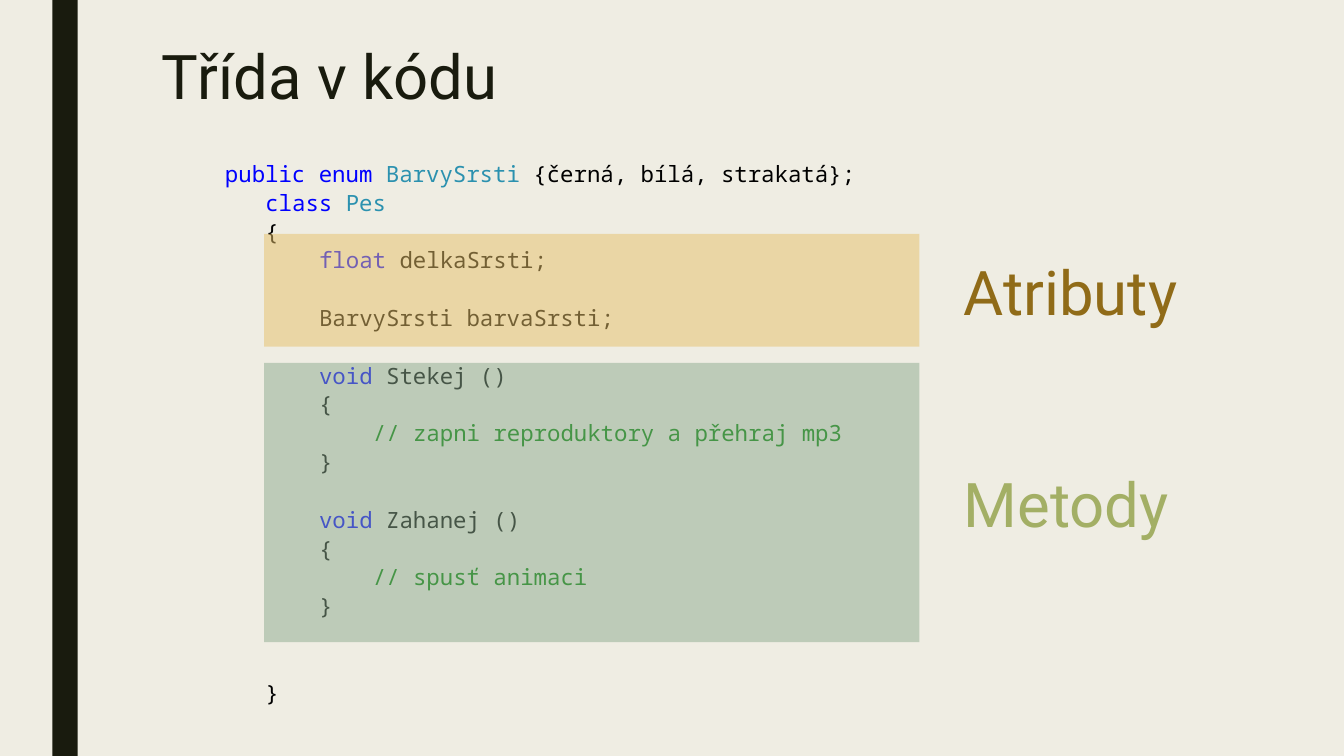
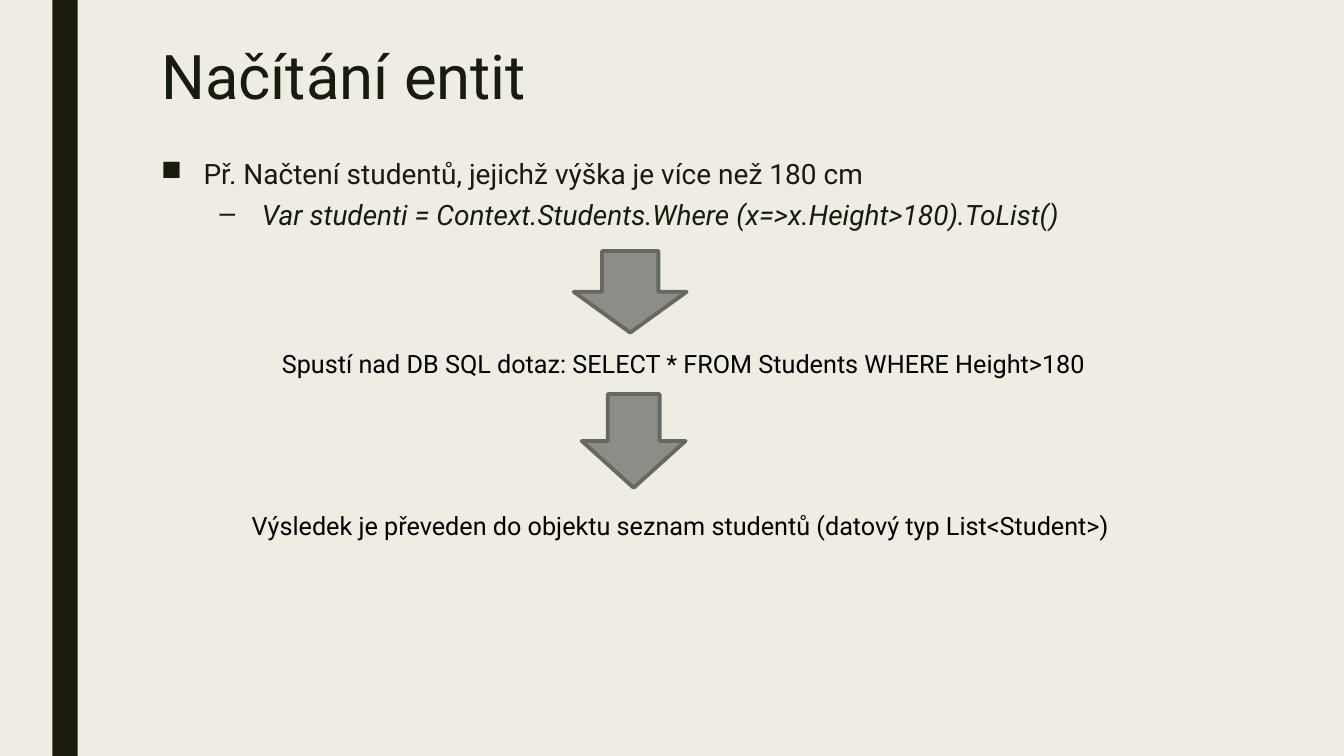
"""Two slides on classes in code and loading entities."""
from lxml import etree
from pptx import Presentation
from pptx.dml.color import RGBColor
from pptx.enum import shapes, text
from pptx.oxml import ns
from pptx.util import Inches, Pt

COLOR = {
    "paper": "EFEDE3", "ink": "191B0E", "black": "000000",
    "key": "0000FF", "type": "2B91AF", "note": "008000",
    "gold": "E6C069", "amber": "906B18", "sage": "8DAB8E", "moss": "A3AF65",
    "gray": "8C8D86", "edge": "686863",
}
SANS, MONO = "Roboto", "Noto Sans Mono"
STEP = 20.57
CHAR = 0.13335


def add_text(slide, box, lines, size, color, font=SANS):
    frame = slide.shapes.add_textbox(*map(Inches, box)).text_frame
    frame.word_wrap = True
    for i, line in enumerate(lines):
        para = frame.paragraphs[0] if i == 0 else frame.add_paragraph()
        para.font.size, para.font.name = Pt(size), font
        para.font.color.rgb = RGBColor.from_string(COLOR[color])
        for words, tint in line:
            run = para.add_run()
            run.text = words
            if tint != color:
                run.font.color.rgb = RGBColor.from_string(COLOR[tint])
    return frame.paragraphs


def add_block(slide, kind, box, fill, alpha=None, edge=None):
    block = slide.shapes.add_shape(kind, *map(Inches, box))
    block.shadow.inherit = False
    block.fill.solid()
    block.fill.fore_color.rgb = RGBColor.from_string(COLOR[fill])
    if alpha:
        tint = block.fill._xPr.find(".//" + ns.qn("a:srgbClr"))
        etree.SubElement(tint, ns.qn("a:alpha")).set("val", str(alpha * 1000))
    if edge:
        block.line.color.rgb = RGBColor.from_string(COLOR[edge])
        block.line.width = Pt(2.75)
    else:
        block.line.fill.background()


RECT = shapes.MSO_SHAPE.RECTANGLE
ARROW = shapes.MSO_SHAPE.DOWN_ARROW

prs = Presentation()
prs.slide_width, prs.slide_height = Inches(13.33), Inches(7.5)
back = prs.slide_master.background.fill
back.solid()
back.fore_color.rgb = RGBColor.from_string(COLOR["paper"])

pages = []
for title in ("Třída v kódu", "Načítání entit"):
    page = prs.slides.add_slide(prs.slide_layouts[6])
    add_block(page, RECT, (0.52, 0, 0.25, 7.5), "ink")
    head = add_text(page, (1.5, 0.42, 10.61, 0.93), [[(title, "ink")]], 44, "ink")
    head[0].line_spacing = 0.89
    pages.append(page)
code, load = pages

listing = [
    (1, 0, [("public enum ", "key"), ("BarvySrsti", "type"),
            (" {černá, bílá, strakatá};", "black")]),
    (4, 0, [("class ", "key"), ("Pes", "type")]),
    (4, 0, [("{", "black")]),
    (8, 0, [("float ", "key"), ("delkaSrsti;", "black")]),
    (8, 1, [("BarvySrsti barvaSrsti;", "black")]),
]
for name, note in (("Stekej", "// zapni reproduktory a přehraj mp3"),
                   ("Zahanej", "// spusť animaci")):
    listing += [
        (8, 1, [("void ", "key"), (name + " ()", "black")]),
        (8, 0, [("{", "black")]),
        (12, 0, [(note, "note")]),
        (8, 0, [("}", "black")]),
    ]
listing.append((4, 2, [("}", "black")]))

paras = add_text(code, (2, 1.52, 10.44, 5.76), [row[2] for row in listing],
                 16, "black", MONO)
for para, (depth, gap, _) in zip(paras, listing):
    para.line_spacing = Pt(STEP)
    para.space_before = Pt(STEP * gap)
    para._p.get_or_add_pPr().set("marL", str(Inches(CHAR * depth)))

for label, top, high, fill, y, tint in (
        ("Atributy", 2.32, 1.12, "gold", 2.47, "amber"),
        ("Metody", 3.6, 2.77, "sage", 4.57, "moss")):
    add_block(code, RECT, (2.62, top, 6.5, high), fill, alpha=50)
    add_text(code, (9.46, y, 3.46, 0.84), [[(label, tint)]], 44, tint)

points = [
    ("Př. Načtení studentů, jejichž výška je více než 180 cm", "■", 0.42, 10),
    ("Var studenti = Context.Students.Where (x=>x.Height>180).ToList()", "–", 1, 5),
]
paras = add_text(load, (1.5, 1.53, 10.61, 5.35),
                 [[(point[0], "ink")] for point in points], 20, "ink")
for para, (_, mark, left, gap) in zip(paras, points):
    para.line_spacing = 0.94
    para.space_before, para.space_after = Pt(gap), Pt(2)
    props = para._p.get_or_add_pPr()
    props.set("marL", str(Inches(left)))
    props.set("indent", str(Inches(-0.42)))
    bullet = etree.Element(ns.qn("a:buChar"), char=mark)
    props.find(ns.qn("a:spcAft")).addnext(bullet)
paras[1].font.italic = True

for arrow, box, words in (
        ((5.69, 2.49, 1.12, 0.81), (2.02, 3.41, 9.52, 0.4),
         "Spustí nad DB SQL dotaz: SELECT * FROM Students WHERE Height>180"),
        ((5.77, 3.91, 1.03, 0.93), (2.08, 5.01, 9.34, 0.4),
         "Výsledek je převeden do objektu seznam studentů (datový typ List<Student>)")):
    add_block(load, ARROW, arrow, "gray", edge="edge")
    paras = add_text(load, box, [[(words, "black")]], 18, "black")
    paras[0].alignment = text.PP_ALIGN.CENTER

prs.save("out.pptx")
